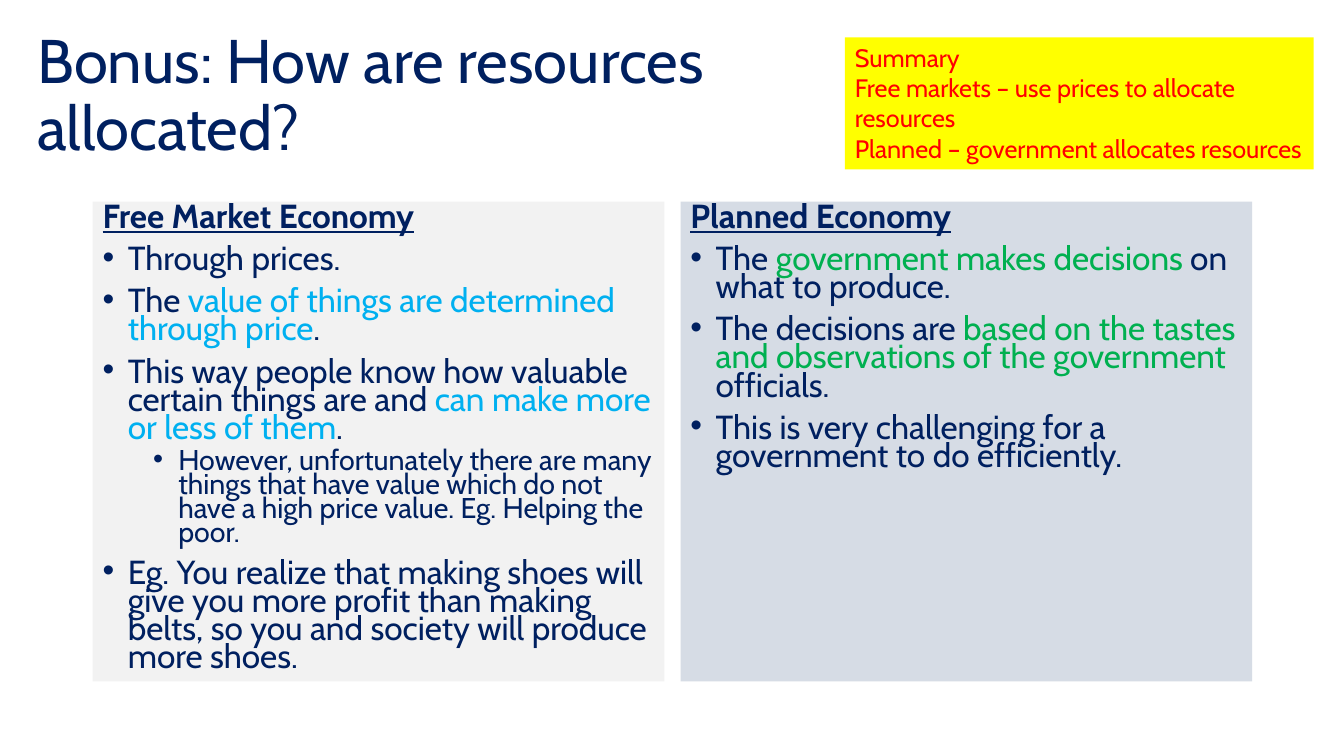
from pptx import Presentation
from pptx.dml.color import RGBColor
from pptx.enum import text as t
from pptx.oxml import parse_xml
from pptx.oxml.ns import nsdecls
from pptx.util import Inches, Pt

HUES = {"navy": "002060", "blue": "00B0F0", "green": "00B050", "red": "FF0000",
        "grey": "F2F2F2", "mist": "D6DCE5", "yellow": "FFFF00"}


def add_run(para, words, size, hue="navy", bold=False):
    run = para.add_run()
    run.text = words
    font = run.font
    font.name, font.size = "Cabin", Pt(size)
    font.bold = font.underline = bold
    font.color.rgb = RGBColor.from_string(HUES[hue])


def add_panel(left, top, width, height, hue):
    """Add a filled text box and return its text frame."""
    box = slide.shapes.add_textbox(Inches(left), Inches(top), Inches(width), Inches(height))
    box.fill.solid()
    box.fill.fore_color.rgb = RGBColor.from_string(HUES[hue])
    box.text_frame.word_wrap = True
    return box.text_frame


deck = Presentation()
deck.slide_width, deck.slide_height = Inches(13.33), Inches(7.5)
slide = deck.slides.add_slide(deck.slide_layouts[5])

title = slide.shapes.title
title.left, title.top = Inches(0.27), Inches(0.24)
title.width, title.height = Inches(7.62), Inches(1.45)
frame = title.text_frame
frame.word_wrap = True
frame.auto_size = t.MSO_AUTO_SIZE.NONE
frame.vertical_anchor = t.MSO_ANCHOR.MIDDLE
para = frame.paragraphs[0]
para.alignment = t.PP_ALIGN.LEFT
para.line_spacing = 0.9
add_run(para, "Bonus: How are resources allocated?", 44)

# Each point is a level and its runs of (words, colour).
columns = [
    (0.92, "grey", "Free Market Economy", [
        (0, [("Through prices.", "navy")]),
        (0, [("The ", "navy"), ("value of things are determined through price", "blue"),
             (".", "navy")]),
        (0, [("This way people know how valuable certain things are and ", "navy"),
             ("can make more or less of them", "blue"), (".", "navy")]),
        (1, [("However, unfortunately there are many things that have value which do not "
              "have a high price value. Eg. Helping the poor.", "navy")]),
        (0, [("Eg. You realize that making shoes will give you more profit than making "
              "belts, so you and society will produce more shoes.", "navy")]),
    ]),
    (6.75, "mist", "Planned Economy", [
        (0, [("The ", "navy"), ("government makes decisions ", "green"),
             ("on what to produce.", "navy")]),
        (0, [("The decisions are ", "navy"),
             ("based on the tastes and observations of the government ", "green"),
             ("officials.", "navy")]),
        (0, [("This is very challenging for a government to do efficiently.", "navy")]),
    ]),
]
for left, hue, head, points in columns:
    frame = add_panel(left, 2, 5.67, 4.76, hue)
    para = frame.paragraphs[0]
    para.line_spacing = 0.7
    add_run(para, head, 23.8, bold=True)
    for level, runs in points:
        para = frame.add_paragraph()
        para.level = level
        para.line_spacing = 0.7
        para.space_before = Pt(5 if level else 10)
        props = para._p.get_or_add_pPr()
        props.set("marL", str(Inches(0.25 + 0.5 * level)))
        props.set("indent", str(Inches(-0.25)))
        props.append(parse_xml(f'<a:buFont {nsdecls("a")} typeface="Arial"/>'))
        props.append(parse_xml(f'<a:buChar {nsdecls("a")} char="•"/>'))
        for words, tint in runs:
            add_run(para, words, 20.4 if level else 23.8, tint)

frame = add_panel(8.38, 0.37, 4.65, 1.31, "yellow")
frame.auto_size = t.MSO_AUTO_SIZE.SHAPE_TO_FIT_TEXT
lines = ["Summary", "Free markets – use prices to allocate resources",
         "Planned – government allocates resources"]
for i, line in enumerate(lines):
    para = frame.add_paragraph() if i else frame.paragraphs[0]
    add_run(para, line, 18, "red")

deck.save("out.pptx")
